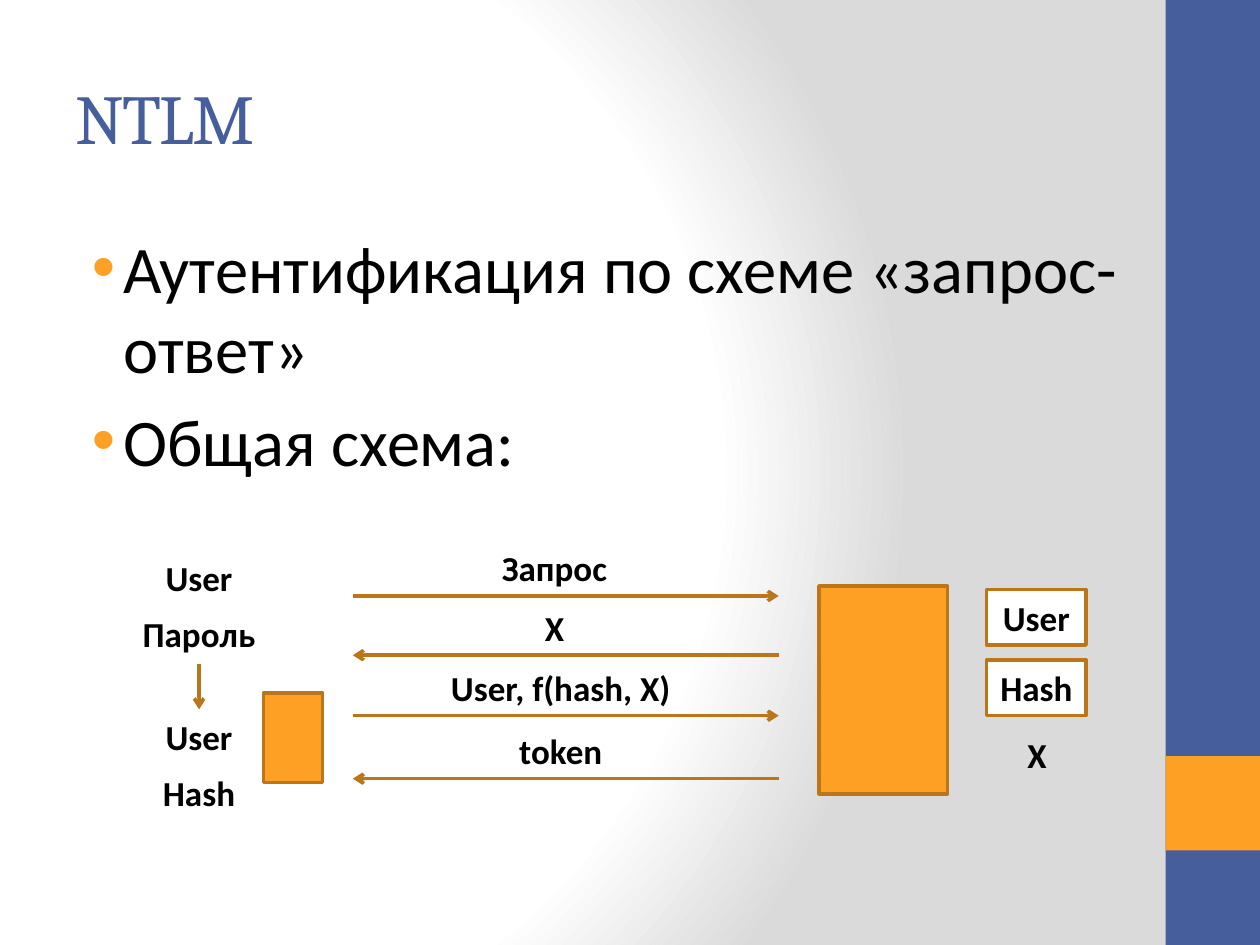
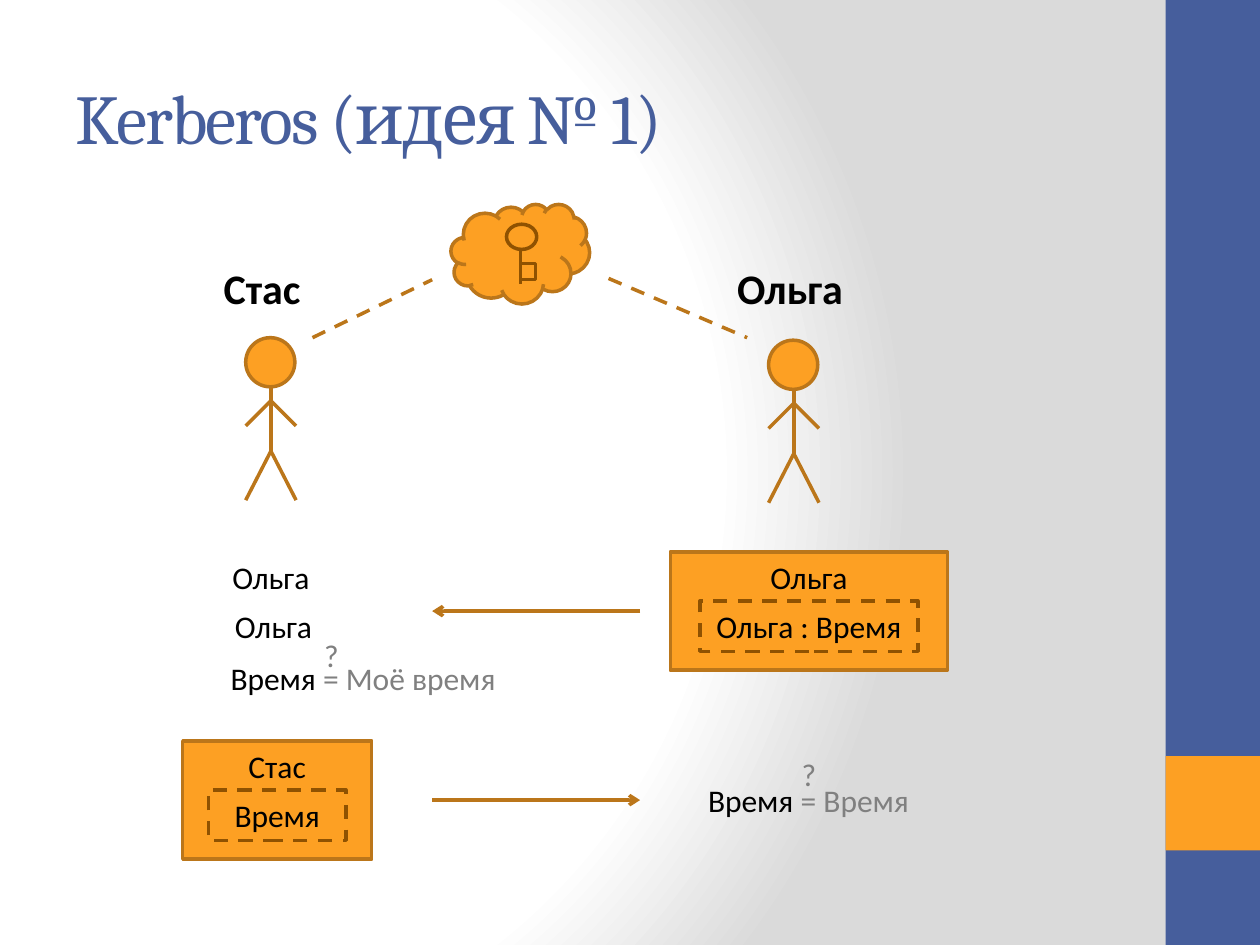
from lxml import etree
from pptx import Presentation
from pptx.dml.color import RGBColor
from pptx.enum.dml import MSO_LINE
from pptx.enum.shapes import MSO_CONNECTOR as Conn, MSO_SHAPE as Shape
from pptx.enum.text import MSO_ANCHOR as Anchor, MSO_AUTO_SIZE as Fit, PP_ALIGN as Align
from pptx.oxml import parse_xml
from pptx.oxml.ns import nsdecls, qn
from pptx.util import Inches, Pt

WIDE, HIGH = 10, 7.5
BAND = 0.75
BLUE, GOLD, RUST, BROWN = "465E9C", "FDA023", "BB761A", "8F5201"
BLACK, GREY, WHITE, SILVER = "000000", "808080", "FFFFFF", "DADADA"
STOPS = [(0, WHITE), (75, WHITE), (100, SILVER)]
FOCUS = {"l": 20, "t": 50, "r": 100, "b": 50}

POINTS = ["Аутентификация по схеме «запрос-ответ»", "Общая схема:"]
CLIENT = [("User", 4.37), ("Пароль", 4.81), ("User", 5.63), ("Hash", 6.07)]
STEPS = [("Запрос", 4.4, 4.73, True), ("X", 4.4, 5.2, False),
         ("User, f(hash, X)", 4.45, 5.68, True), ("token", 4.45, 6.18, False)]
STORE = [("User", 4.68), ("Hash", 5.24)]
SPAN = (2.8, 6.18)

PEOPLE = [("Стас", 2.08, 2.15, 2.68), ("Ольга", 6.27, 6.3, 2.7)]
LIMBS = [(0, 0.4, 0, 0.9), (0, 0.9, -0.2, 1.29), (0, 0.9, 0.2, 1.29),
         (0, 0.5, -0.2, 0.7), (0, 0.5, 0.2, 0.7)]
LINKS = [(2.48, 2.68, 3.43, 2.22), (4.83, 2.21, 5.93, 2.68)]
CARDS = [("Ольга", "Ольга : Время", 6.42, 4.38, 2.2, 1.73),
         ("Стас", "Время", 2.2, 5.88, 1.5, 1.09)]
MAIL = [(5.08, 3.43, 4.85), (3.43, 5.08, 6.35)]
NOTES = [("Ольга", 2.15, 4.38), ("Ольга", 2.17, 4.77)]
CHECKS = [("Время ", "= Моё время", 1.83, 5.18, 2.63, 5),
          ("Время ", "= Время", 5.62, 6.15, 6.42, 5.94)]


def tint(code):
    return RGBColor.from_string(code)


def style(part, size, color=BLACK, bold=False, face="Calibri"):
    font = part.font
    font.name, font.size, font.bold = face, Pt(size), bold
    font.color.rgb = tint(color)


def place(part, x, y, w, h):
    part.left, part.top, part.width, part.height = map(Inches, (x, y, w, h))


def ink(line, color, dash):
    line.color.rgb = tint(color)
    line.width = Pt(2)
    if dash:
        line.dash_style = MSO_LINE.DASH


def shape(slide, x, y, w, h, kind=Shape.RECTANGLE, fill=GOLD, edge=RUST, dash=False):
    item = slide.shapes.add_shape(kind, *map(Inches, (x, y, w, h)))
    item.shadow.inherit = False
    item.fill.solid()
    item.fill.fore_color.rgb = tint(fill)
    if edge:
        ink(item.line, edge, dash)
    else:
        item.line.fill.background()
    return item


def write(item, parts, size, bold=False, align=Align.CENTER):
    frame = item.text_frame
    frame.word_wrap, frame.auto_size = True, Fit.NONE
    frame.vertical_anchor = Anchor.MIDDLE
    frame.margin_left = frame.margin_right = 0
    para = frame.paragraphs[0]
    para.alignment = align
    style(para, size, bold=bold)
    for text, color in parts:
        run = para.add_run()
        run.text = text
        style(run, size, color, bold)


def label(slide, text, mid, y, size=20, bold=True, w=2.05, color=BLACK):
    high = size * 0.0167 + 0.1
    box = slide.shapes.add_textbox(*map(Inches, (mid - w / 2, y, w, high)))
    write(box, [(text, color)], size, bold)


def line(slide, x1, y1, x2, y2, color=RUST, dash=False, arrow=False):
    item = slide.shapes.add_connector(Conn.STRAIGHT, *map(Inches, (x1, y1, x2, y2)))
    ink(item.line, color, dash)
    if arrow:
        etree.SubElement(item.line._get_or_add_ln(), qn("a:tailEnd"), type="arrow")
    etree.SubElement(item._element.spPr, qn("a:effectLst"))


def paint(slide):
    stops = "".join(f'<a:gs pos="{at * 1000}"><a:srgbClr val="{code}"/></a:gs>'
                    for at, code in STOPS)
    focus = " ".join(f'{side}="{at * 1000}"' for side, at in FOCUS.items())
    fill = slide.background.fill
    fill.gradient()
    old = slide._element.cSld.find(".//" + qn("a:gradFill"))
    old.getparent().replace(old, parse_xml(
        f'<a:gradFill {nsdecls("a")} rotWithShape="1"><a:gsLst>{stops}</a:gsLst>'
        f'<a:path path="circle"><a:fillToRect {focus}/></a:path></a:gradFill>'))


def start(deck, title, layout):
    slide = deck.slides.add_slide(deck.slide_layouts[layout])
    paint(slide)
    shape(slide, WIDE - BAND, 0, BAND, HIGH, fill=BLUE, edge=None)
    shape(slide, WIDE - BAND, HIGH - 2 * BAND, BAND, BAND, edge=None)
    head = slide.shapes.title
    place(head, 0.5, 0.3, 8.33, 1.25)
    frame = head.text_frame
    frame.text = title
    frame.vertical_anchor, frame.auto_size = Anchor.MIDDLE, Fit.NONE
    para = frame.paragraphs[0]
    para.alignment = Align.LEFT
    style(para, 40, BLUE, face="Cambria")
    para.runs[0].font._element.set("spc", "-100")
    return slide


def bullets(slide, items):
    body = slide.placeholders[1]
    place(body, 0.5, 1.75, 8.75, 5.25)
    frame = body.text_frame
    frame.text = "\n".join(items)
    frame.auto_size = Fit.NONE
    for para in frame.paragraphs:
        style(para, 38)
        props = para._p.get_or_add_pPr()
        props.set("marL", str(Inches(0.38)))
        props.set("indent", str(Inches(-0.25)))
        mark = parse_xml(f'<a:buClr {nsdecls("a")}><a:srgbClr val="{GOLD}"/></a:buClr>')
        props.insert(0, mark)


def scheme(deck):
    slide = start(deck, "NTLM", 1)
    bullets(slide, POINTS)
    shape(slide, 2.09, 5.5, 0.47, 0.71)
    shape(slide, 6.5, 4.65, 1.02, 1.65)
    for text, y in CLIENT:
        label(slide, text, 1.58, y, w=1.1)
    line(slide, 1.58, 5.27, 1.58, 5.63, arrow=True)
    for text, mid, y, ahead in STEPS:
        x1, x2 = SPAN if ahead else SPAN[::-1]
        line(slide, x1, y, x2, y, arrow=True)
        label(slide, text, mid, y - 0.44)
    for text, y in STORE:
        box = shape(slide, 7.83, y, 0.79, 0.44, fill=WHITE)
        write(box, [(text, BLACK)], 20, True)
    label(slide, "X", 8.23, 5.77, w=0.55)


def person(slide, name, mid, x, y):
    shape(slide, x - 0.2, y, 0.39, 0.39, Shape.OVAL)
    for x1, y1, x2, y2 in LIMBS:
        line(slide, x + x1, y + y1, x + x2, y + y2)
    label(slide, name, mid, 2.03, 24, w=1.07)


def secret(slide):
    shape(slide, 3.58, 1.62, 1.1, 0.79, Shape.CLOUD)
    shape(slide, 4.02, 1.78, 0.24, 0.2, Shape.OVAL, edge=BROWN)
    line(slide, 4.13, 1.98, 4.13, 2.25, BROWN)
    shape(slide, 4.13, 2.09, 0.12, 0.13, edge=BROWN)


def idea(deck):
    slide = start(deck, "Kerberos (идея № 1)", 5)
    for who in PEOPLE:
        person(slide, *who)
    secret(slide)
    for ends in LINKS:
        line(slide, *ends, dash=True)
    for name, text, mid, y, w, inner in CARDS:
        shape(slide, mid - w / 2, y, w, 0.94)
        label(slide, name, mid, y, 18, False, 0.88)
        box = shape(slide, mid - inner / 2, y + 0.39, inner, 0.4, edge=BROWN, dash=True)
        write(box, [(text, BLACK)], 18)
    for x1, x2, y in MAIL:
        line(slide, x1, y, x2, y, arrow=True)
    for text, mid, y in NOTES:
        label(slide, text, mid, y, 18, False, 0.88)
    for text, test, x, y, mid, top in CHECKS:
        box = slide.shapes.add_textbox(*map(Inches, (x, y, 2.3, 0.4)))
        write(box, [(text, BLACK), (test, GREY)], 18, align=Align.LEFT)
        label(slide, "?", mid, top, 18, False, 0.88, GREY)


def main():
    deck = Presentation()
    deck.slide_width, deck.slide_height = Inches(WIDE), Inches(HIGH)
    scheme(deck)
    idea(deck)
    deck.save("out.pptx")


if __name__ == "__main__":
    main()
